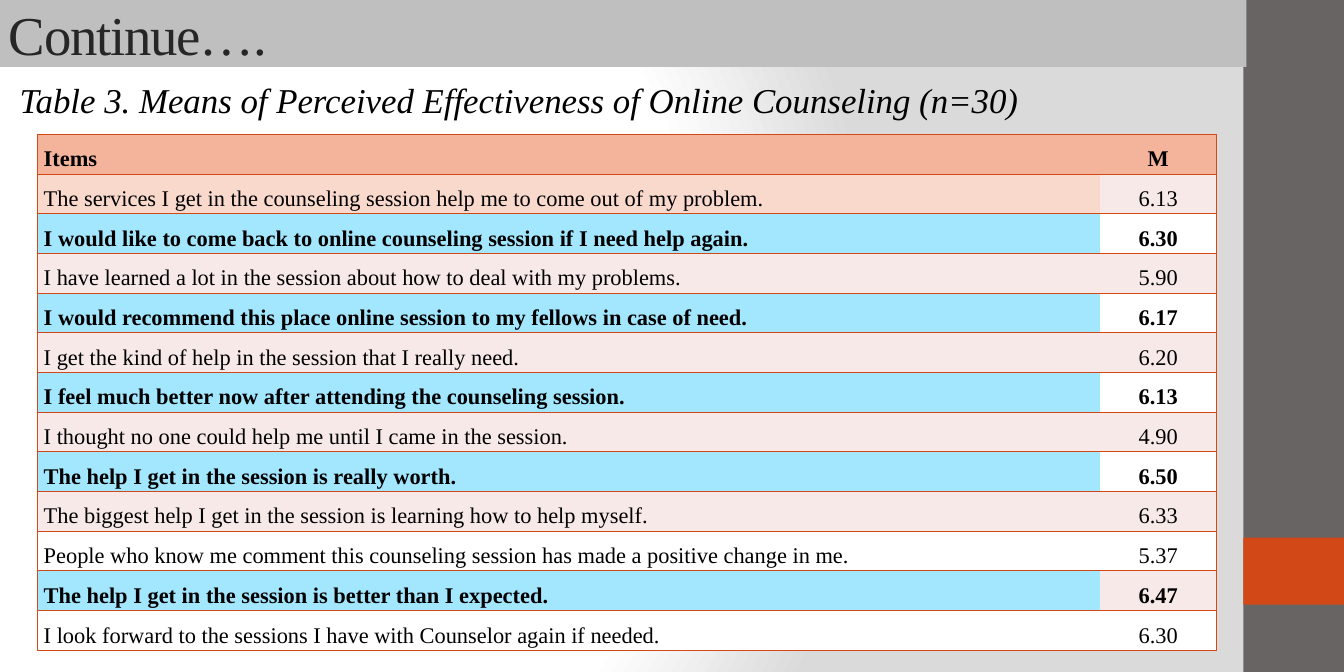
from pptx import Presentation
from pptx.dml.color import RGBColor
from pptx.enum.shapes import MSO_SHAPE
from pptx.enum.text import MSO_ANCHOR, PP_ALIGN
from pptx.oxml import parse_xml
from pptx.oxml.ns import nsdecls, qn
from pptx.util import Cm, Pt

FONT = "Times New Roman"
HEX = {
    "white": "FFFFFF", "mist": "DADADA", "bar": "BFBFBF", "side": "696464",
    "orange": "D34817", "ink": "262626", "black": "000000", "head": "F4B39B",
    "peach": "FAD9CD", "pink": "F7E9E8", "blue": "A3E7FF",
}
# Item, mean, highlighted
ROWS = [
    ("The services I get in the counseling session help me to come out of my problem.", "6.13", False),
    ("I would like to come back to online counseling session if I need help again.", "6.30", True),
    ("I have learned a lot in the session about how to deal with my problems.", "5.90", False),
    ("I would recommend this place online session to my fellows in case of need.", "6.17", True),
    ("I get the kind of help in the session that I really need.", "6.20", False),
    ("I feel much better now after attending the counseling session.", "6.13", True),
    ("I thought no one could help me until I came in the session.", "4.90", False),
    ("The help I get in the session is really worth.", "6.50", True),
    ("The biggest help I get in the session is learning how to help myself.", "6.33", False),
    ("People who know me comment this counseling session has made a positive change in me.", "5.37", False),
    ("The help I get in the session is better than I expected.", "6.47", True),
    ("I look forward to the sessions I have with Counselor again if needed.", "6.30", False),
]


def paint(fill, name):
    fill.solid()
    fill.fore_color.rgb = RGBColor.from_string(HEX[name])


def place(shape, left, top, width, height):
    shape.left, shape.top = Cm(left), Cm(top)
    shape.width, shape.height = Cm(width), Cm(height)


def style(para, size, color="black", bold=False, italic=False):
    for run in para.runs:
        font = run.font
        font.name, font.size = FONT, Pt(size)
        font.bold, font.italic = bold, italic
        font.color.rgb = RGBColor.from_string(HEX[color])


def set_back(slide):
    """Give the slide a radial gradient that greys towards the right."""
    slide.background.fill.solid()
    plain = slide.element.find(".//" + qn("a:solidFill"))
    stops = "".join(
        f'<a:gs pos="{pos}"><a:srgbClr val="{HEX[name]}"/></a:gs>'
        for pos, name in [(0, "white"), (75000, "white"), (100000, "mist")])
    grad = parse_xml(
        f'<a:gradFill {nsdecls("a")} rotWithShape="1"><a:gsLst>{stops}</a:gsLst>'
        '<a:path path="circle"><a:fillToRect l="20000" t="50000" r="100000" b="50000"/>'
        '</a:path></a:gradFill>')
    plain.getparent().replace(plain, grad)


def add_side(slide):
    """Put the side strip and its accent behind the placeholders."""
    bands = [(0, 19.05, "side"), (15.24, 1.9, "orange")]
    for spot, (top, height, color) in enumerate(bands, 2):
        rect = slide.shapes.add_shape(
            MSO_SHAPE.RECTANGLE, Cm(35.25), Cm(top), Cm(2.85), Cm(height))
        rect.shadow.inherit = False
        rect.line.fill.background()
        paint(rect.fill, color)
        slide.shapes.element.insert(spot, rect.element)


def set_title(slide):
    title = slide.shapes.title
    place(title, 0, 0, 35.33, 1.9)
    paint(title.fill, "bar")
    frame = title.text_frame
    frame.text = "Continue…."
    frame.vertical_anchor = MSO_ANCHOR.MIDDLE
    para = frame.paragraphs[0]
    para.alignment = PP_ALIGN.LEFT
    style(para, 44, "ink")
    para.runs[0].font._element.set("spc", "-100")


def set_body(slide):
    body = slide.placeholders[1]
    place(body, 0, 2.11, 35.36, 16.94)
    body.text_frame.text = "Table 3. Means of Perceived Effectiveness of Online Counseling (n=30)"
    para = body.text_frame.paragraphs[0]
    style(para, 28, italic=True)
    props = para._p.get_or_add_pPr()
    props.set("marL", str(Cm(0.3)))
    props.set("indent", "0")
    props.append(parse_xml(f'<a:buNone {nsdecls("a")}/>'))


def set_edges(cell, shown):
    """Draw the sides named in shown and clear the others."""
    props = cell._tc.get_or_add_tcPr()
    for spot, side in enumerate("LRTB"):
        fill = "<a:noFill/>"
        if side in shown:
            fill = f'<a:solidFill><a:srgbClr val="{HEX["orange"]}"/></a:solidFill>'
        props.insert(spot, parse_xml(
            f'<a:ln{side} {nsdecls("a")} w="{Pt(1)}">{fill}</a:ln{side}>'))


def fill_cell(cell, text, color, bold, last):
    cell.text = text
    cell.margin_left = cell.margin_right = Cm(0.18)
    cell.margin_top = cell.margin_bottom = 0
    para = cell.text_frame.paragraphs[0]
    para.alignment = PP_ALIGN.CENTER if last else PP_ALIGN.LEFT
    para.line_spacing = 1.5
    style(para, 18, bold=bold)
    paint(cell.fill, color)
    set_edges(cell, "RTB" if last else "LTB")


def add_means(slide):
    rows = [("Items", "M", True)] + ROWS
    table = slide.shapes.add_table(
        len(rows), 2, Cm(1.06), Cm(3.81), Cm(33.43), Cm(14.63)).table
    table.columns[0].width, table.columns[1].width = Cm(30.12), Cm(3.31)
    for num, (item, mean, bold) in enumerate(rows):
        band = "pink" if num % 2 else "white"
        left = "blue" if bold else band
        if num == 0:
            left = band = "head"
        elif num == 1:
            left = "peach"
        fill_cell(table.cell(num, 0), item, left, bold, False)
        fill_cell(table.cell(num, 1), mean, band, bold, True)


def main():
    deck = Presentation()
    deck.slide_width, deck.slide_height = Cm(38.1), Cm(19.05)
    slide = deck.slides.add_slide(deck.slide_layouts[1])
    set_back(slide)
    add_side(slide)
    set_title(slide)
    set_body(slide)
    add_means(slide)
    deck.save("out.pptx")


if __name__ == "__main__":
    main()
